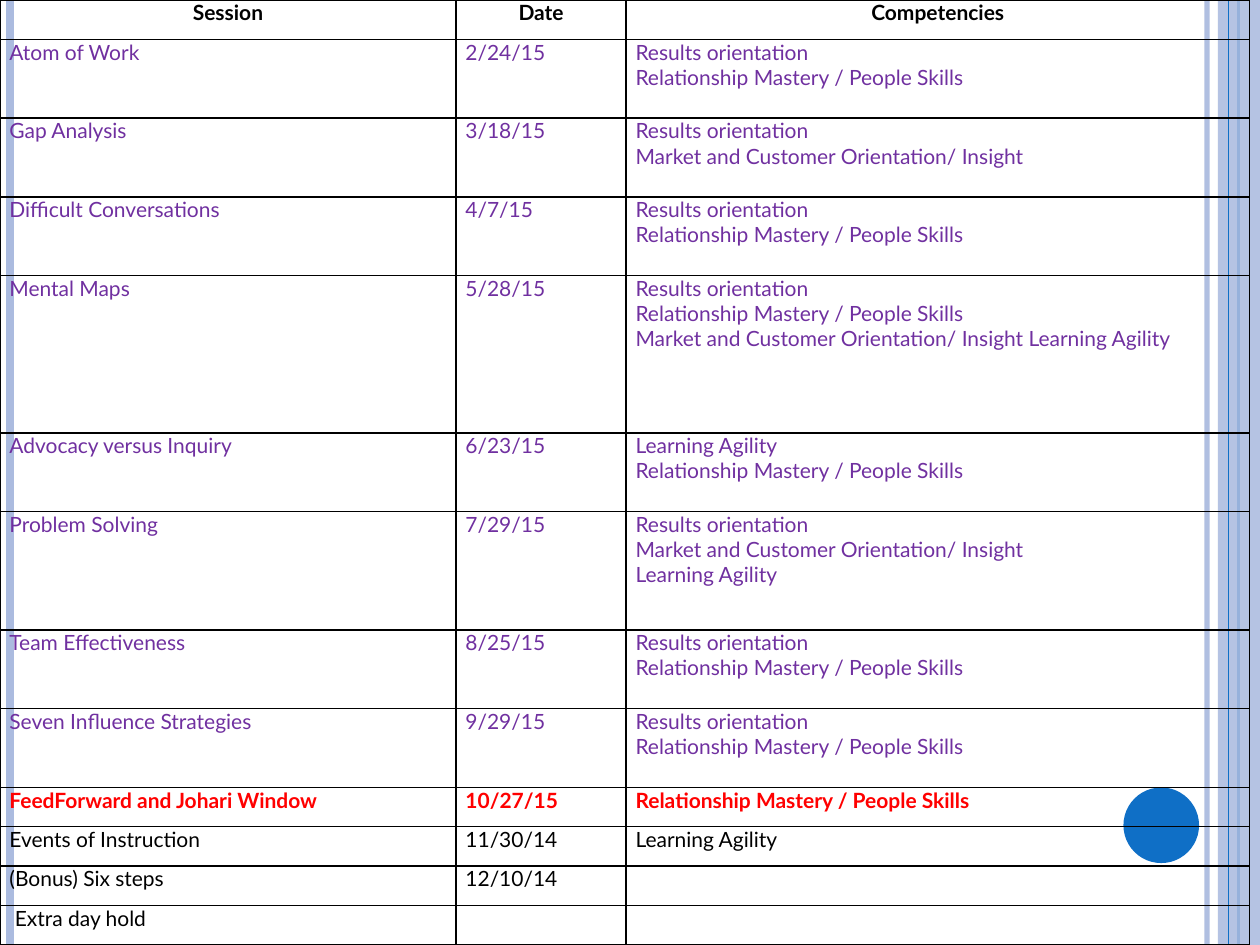
"""Build a one-slide training calendar of sessions, dates and competencies."""
from dataclasses import dataclass

from lxml import etree
from pptx import Presentation
from pptx.dml.color import RGBColor
from pptx.enum.shapes import MSO_CONNECTOR, MSO_SHAPE
from pptx.enum.text import PP_ALIGN
from pptx.oxml.ns import qn
from pptx.util import Pt

STRAIGHT = MSO_CONNECTOR.STRAIGHT
RECT, OVAL = MSO_SHAPE.RECTANGLE, MSO_SHAPE.OVAL
LEFT, CENTER = PP_ALIGN.LEFT, PP_ALIGN.CENTER

COLORS = {"black": "000000", "purple": "7030A0", "red": "FF0000",
          "blue": "0F6FC6", "pale": "ABBBDF"}
WIDTH, HEIGHT = 720, 540
COL_WIDTHS = (260.6, 97.2, 356.2)
ROW_UNIT = 22.5
RESULTS = "Results orientation"
PEOPLE = "Relationship Mastery / People Skills"
MARKET = "Market and Customer Orientation/ Insight"
AGILITY = "Learning Agility"


@dataclass
class Stripe:
    x: float
    width: float
    color: str
    alpha: int = 100


@dataclass
class Block:
    kind: int
    x: float
    y: float
    w: float
    h: float
    color: str
    alpha: int = 100


@dataclass
class Session:
    name: str
    date: str
    competencies: tuple = ()
    units: int = 1
    color: str = "black"
    bold: bool = False
    align: int = LEFT


DECOR = (
    Stripe(689.8, 3, "pale", 93),
    Stripe(5.8, 4.5, "pale"),
    Stripe(707.8, 1.5, "blue"),
    Block(RECT, 696, 0, 24, HEIGHT, "pale", 87),
    Stripe(702, 0.75, "blue"),
    Block(OVAL, 642, 450, 43.2, 43.2, "blue"),
)

SESSIONS = (
    Session("Session", "Date", ("Competencies",), bold=True, align=CENTER),
    Session("Atom of Work", "2/24/15", (RESULTS, PEOPLE), 2, "purple"),
    Session("Gap Analysis", "3/18/15", (RESULTS, MARKET), 2, "purple"),
    Session("Difficult Conversations", "4/7/15", (RESULTS, PEOPLE), 2, "purple"),
    Session("Mental Maps", "5/28/15",
            (RESULTS, PEOPLE, f"{MARKET} {AGILITY}"), 4, "purple"),
    Session("Advocacy versus Inquiry", "6/23/15", (AGILITY, PEOPLE), 2, "purple"),
    Session("Problem Solving", "7/29/15", (RESULTS, MARKET, AGILITY), 3, "purple"),
    Session("Team Effectiveness", "8/25/15", (RESULTS, PEOPLE), 2, "purple"),
    Session("Seven Influence Strategies", "9/29/15", (RESULTS, PEOPLE), 2, "purple"),
    Session("FeedForward and Johari Window", "10/27/15", (PEOPLE,),
            color="red", bold=True),
    Session("Events of Instruction", "11/30/14", (AGILITY,)),
    Session("(Bonus) Six steps", "12/10/14"),
    Session(" Extra day hold", ""),
)


def rgb(name: str) -> RGBColor:
    return RGBColor.from_string(COLORS[name])


def set_alpha(element, percent: int) -> None:
    if percent < 100:
        clr = next(element.iter(qn("a:srgbClr")))
        etree.SubElement(clr, qn("a:alpha")).set("val", str(percent * 1000))


def add_stripe(s, stripe: Stripe) -> None:
    x = Pt(stripe.x)
    sp = s.shapes.add_connector(STRAIGHT, x, 0, x, Pt(HEIGHT))
    sp.line.color.rgb = rgb(stripe.color)
    sp.line.width = Pt(stripe.width)
    props = sp._element.spPr
    set_alpha(props, stripe.alpha)
    etree.SubElement(props, qn("a:effectLst"))


def add_block(s, block: Block) -> None:
    sp = s.shapes.add_shape(block.kind, Pt(block.x), Pt(block.y),
                            Pt(block.w), Pt(block.h))
    sp.shadow.inherit = False
    sp.fill.solid()
    sp.fill.fore_color.rgb = rgb(block.color)
    sp.line.fill.background()
    set_alpha(sp._element.spPr, block.alpha)


def write(tf, text: str, *, color: str, bold: bool, align: int,
          size: float = 12, font: str = "Lato") -> None:
    for i, line in enumerate(text.split("\n")):
        p = tf.add_paragraph() if i else tf.paragraphs[0]
        p.alignment = align
        if line:
            r = p.add_run()
            r.text = line
            r.font.name, r.font.size, r.font.bold = font, Pt(size), bold
            r.font.color.rgb = rgb(color)


def format_cell(cell) -> None:
    cell.margin_left = cell.margin_right = Pt(5.4)
    cell.margin_top = cell.margin_bottom = 0
    cell.fill.background()
    props = cell._tc.get_or_add_tcPr()
    for i, side in enumerate(("lnL", "lnR", "lnT", "lnB")):
        ln = etree.Element(qn(f"a:{side}"), w=str(Pt(1)))
        fill = etree.SubElement(ln, qn("a:solidFill"))
        etree.SubElement(fill, qn("a:srgbClr"), val=COLORS["black"])
        props.insert(i, ln)


def add_schedule(s, sessions: tuple) -> None:
    table = s.shapes.add_table(len(sessions), len(COL_WIDTHS), 0, 0,
                               Pt(sum(COL_WIDTHS)), Pt(HEIGHT)).table
    table.first_row = table.horz_banding = False
    for column, width in zip(table.columns, COL_WIDTHS):
        column.width = Pt(width)
    for row, session in zip(table.rows, sessions):
        row.height = Pt(session.units * ROW_UNIT)
        texts = (session.name, session.date, "\n".join(session.competencies))
        for cell, text in zip(row.cells, texts):
            format_cell(cell)
            write(cell.text_frame, text, color=session.color,
                  bold=session.bold, align=session.align)


def main() -> None:
    prs = Presentation()
    prs.slide_width, prs.slide_height = Pt(WIDTH), Pt(HEIGHT)
    s = prs.slides.add_slide(prs.slide_layouts[6])
    for item in DECOR:
        if isinstance(item, Stripe):
            add_stripe(s, item)
        else:
            add_block(s, item)
    add_schedule(s, SESSIONS)
    prs.save("out.pptx")


if __name__ == "__main__":
    main()
